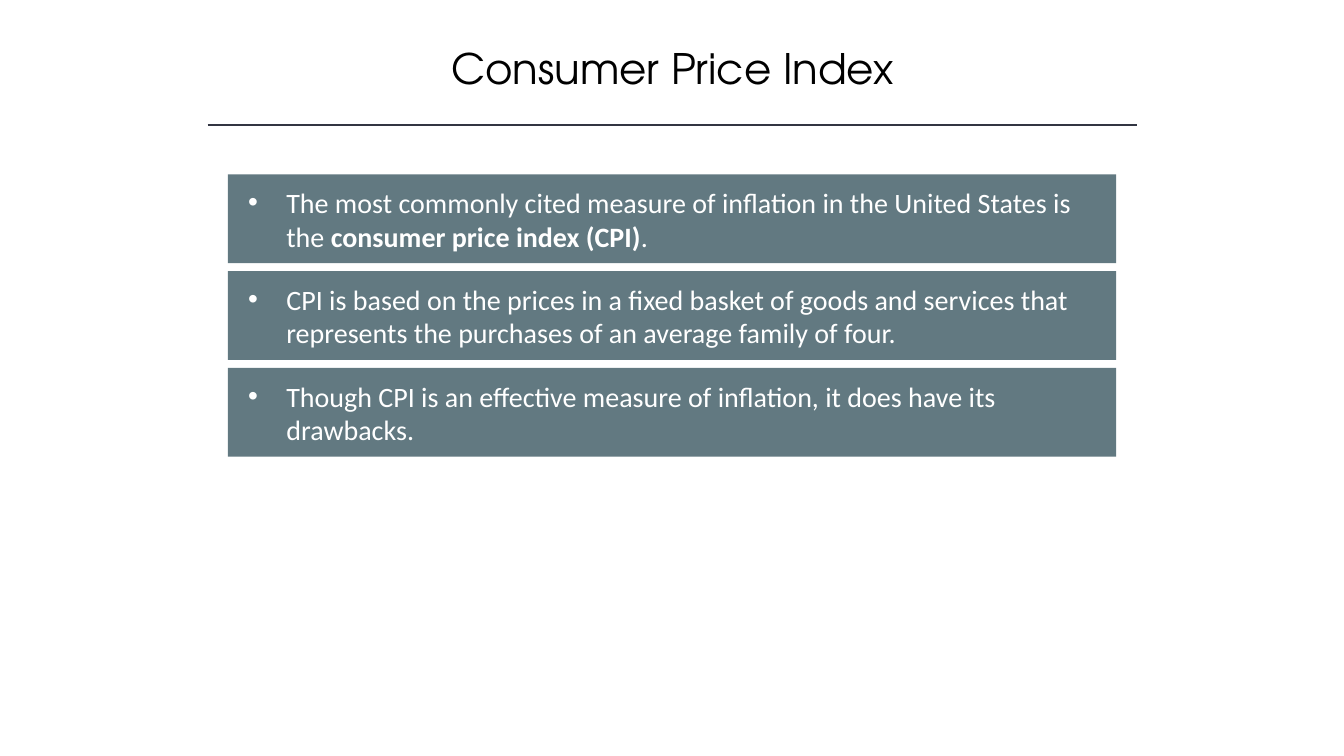
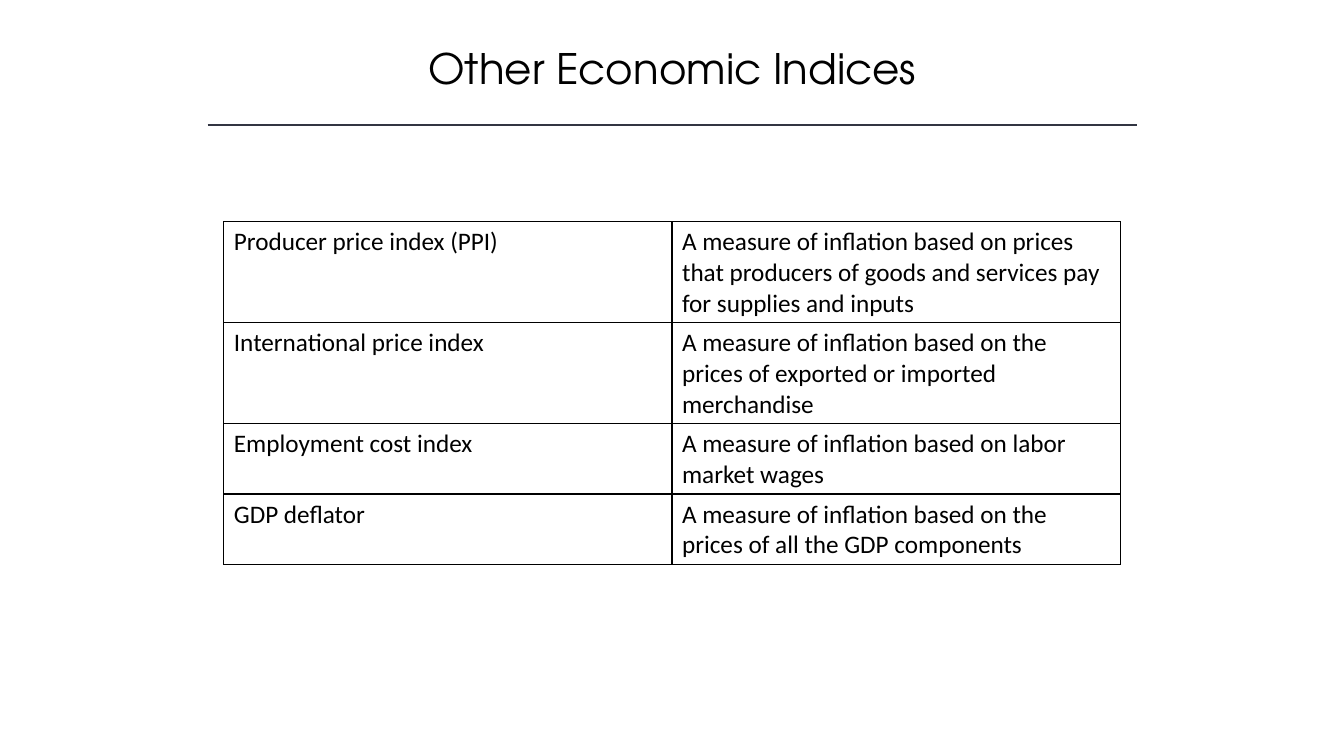
"""Builds two slides on price indices."""
from lxml import etree
from pptx import Presentation
from pptx.dml.color import RGBColor
from pptx.enum import shapes, text
from pptx.oxml import ns
from pptx.util import Inches, Pt

BLACK = RGBColor(0x00, 0x00, 0x00)
WHITE = RGBColor(0xFF, 0xFF, 0xFF)
RULE = RGBColor(0x32, 0x35, 0x42)
SLATE = RGBColor(0x62, 0x79, 0x81)
TITLE_FONT = "TeX Gyre Adventor"
BODY_FONT = "Calibri"

CPI_POINTS = [
    [("The most commonly cited measure of inflation in the United States is the ", False),
     ("consumer price index (CPI)", True), (".", False)],
    [("CPI is based on the prices in a fixed basket of goods and services that "
      "represents the purchases of an average family of four.", False)],
    [("Though CPI is an effective measure of inflation, it does have its drawbacks.", False)],
]
INDICES = [
    ("Producer price index (PPI)",
     "A measure of inflation based on prices that producers of goods and services "
     "pay for supplies and inputs", 1.0),
    ("International price index",
     "A measure of inflation based on the prices of exported or imported merchandise", 1.0),
    ("Employment cost index", "A measure of inflation based on labor market wages", 0.7),
    ("GDP deflator",
     "A measure of inflation based on the prices of all the GDP components", 0.7),
]


def add_run(paragraph, words, size, color, font=BODY_FONT, bold=False):
    """Append one styled run to a paragraph."""
    run = paragraph.add_run()
    run.text = words
    run.font.name, run.font.size, run.font.bold = font, Pt(size), bold
    run.font.color.rgb = color


def titled_slide(deck, title):
    """Add a blank slide with the shared title and rule."""
    slide = deck.slides.add_slide(deck.slide_layouts[6])
    heading = slide.shapes.add_textbox(Inches(1.67), Inches(0.37), Inches(10), Inches(0.61))
    heading.text_frame.word_wrap = True
    paragraph = heading.text_frame.paragraphs[0]
    paragraph.alignment = text.PP_ALIGN.CENTER
    add_run(paragraph, title, 30, BLACK, TITLE_FONT)
    rule = slide.shapes.add_connector(
        shapes.MSO_CONNECTOR.STRAIGHT, Inches(2.06), Inches(1.24), Inches(11.28), Inches(1.24))
    rule.line.color.rgb = RULE
    rule.line.width = Pt(1)
    etree.SubElement(rule._element.spPr, ns.qn("a:effectLst"))
    return slide


def set_bullet(paragraph, indent):
    """Give a paragraph a white hanging bullet."""
    props = paragraph._p.get_or_add_pPr()
    props.set("marL", str(indent))
    props.set("indent", str(-indent))
    color = etree.SubElement(props, ns.qn("a:buClr"))
    etree.SubElement(color, ns.qn("a:srgbClr"), val=str(WHITE))
    etree.SubElement(props, ns.qn("a:buFont"), typeface="Arial")
    etree.SubElement(props, ns.qn("a:buChar"), char="•")


def add_point_bar(slide, runs, left, top, width, height):
    """Draw one filled bar holding a bulleted point."""
    bar = slide.shapes.add_shape(shapes.MSO_SHAPE.RECTANGLE, left, top, width, height)
    bar.shadow.inherit = False
    bar.fill.solid()
    bar.fill.fore_color.rgb = SLATE
    bar.line.fill.background()
    frame = bar.text_frame
    frame.word_wrap = True
    frame.vertical_anchor = text.MSO_ANCHOR.TOP
    frame.margin_left, frame.margin_right = Inches(0.2), Inches(0.27)
    frame.margin_top, frame.margin_bottom = Inches(0.11), Inches(0.05)
    paragraph = frame.paragraphs[0]
    paragraph.alignment = text.PP_ALIGN.LEFT
    set_bullet(paragraph, Inches(0.38))
    for words, bold in runs:
        add_run(paragraph, words, 20, WHITE, bold=bold)


def add_point_bars(slide, points, left, top, width, height, gap):
    """Stack the point bars downwards with equal gaps."""
    for index, runs in enumerate(points):
        add_point_bar(slide, runs, left, top + index * (height + gap), width, height)


def set_borders(cell):
    """Draw a thin black line on every side of a cell."""
    props = cell._tc.get_or_add_tcPr()
    for position, side in enumerate(("lnL", "lnR", "lnT", "lnB")):
        edge = etree.Element(ns.qn(f"a:{side}"), w=str(Pt(1)))
        fill = etree.SubElement(edge, ns.qn("a:solidFill"))
        etree.SubElement(fill, ns.qn("a:srgbClr"), val=str(BLACK))
        props.insert(position, edge)


def add_index_table(slide, indices, left, top, width):
    """Draw the table of indices and their definitions."""
    height = Inches(sum(row_height for _, _, row_height in indices))
    table = slide.shapes.add_table(len(indices), 2, left, top, width, height).table
    table.first_row = table.horz_banding = False
    for row, (name, meaning, row_height) in zip(table.rows, indices):
        row.height = Inches(row_height)
        for cell, words in zip(row.cells, (name, meaning)):
            cell.fill.background()
            set_borders(cell)
            add_run(cell.text_frame.paragraphs[0], words, 18, BLACK)


def main():
    """Build and save the deck."""
    deck = Presentation()
    deck.slide_width, deck.slide_height = Inches(13.33), Inches(7.5)
    cpi = titled_slide(deck, "Consumer Price Index")
    add_point_bars(cpi, CPI_POINTS, Inches(2.26), Inches(1.73),
                   Inches(8.81), Inches(0.88), Inches(0.08))
    others = titled_slide(deck, "Other Economic Indices")
    add_index_table(others, INDICES, Inches(2.22), Inches(2.2), Inches(8.89))
    deck.save("out.pptx")


if __name__ == "__main__":
    main()
